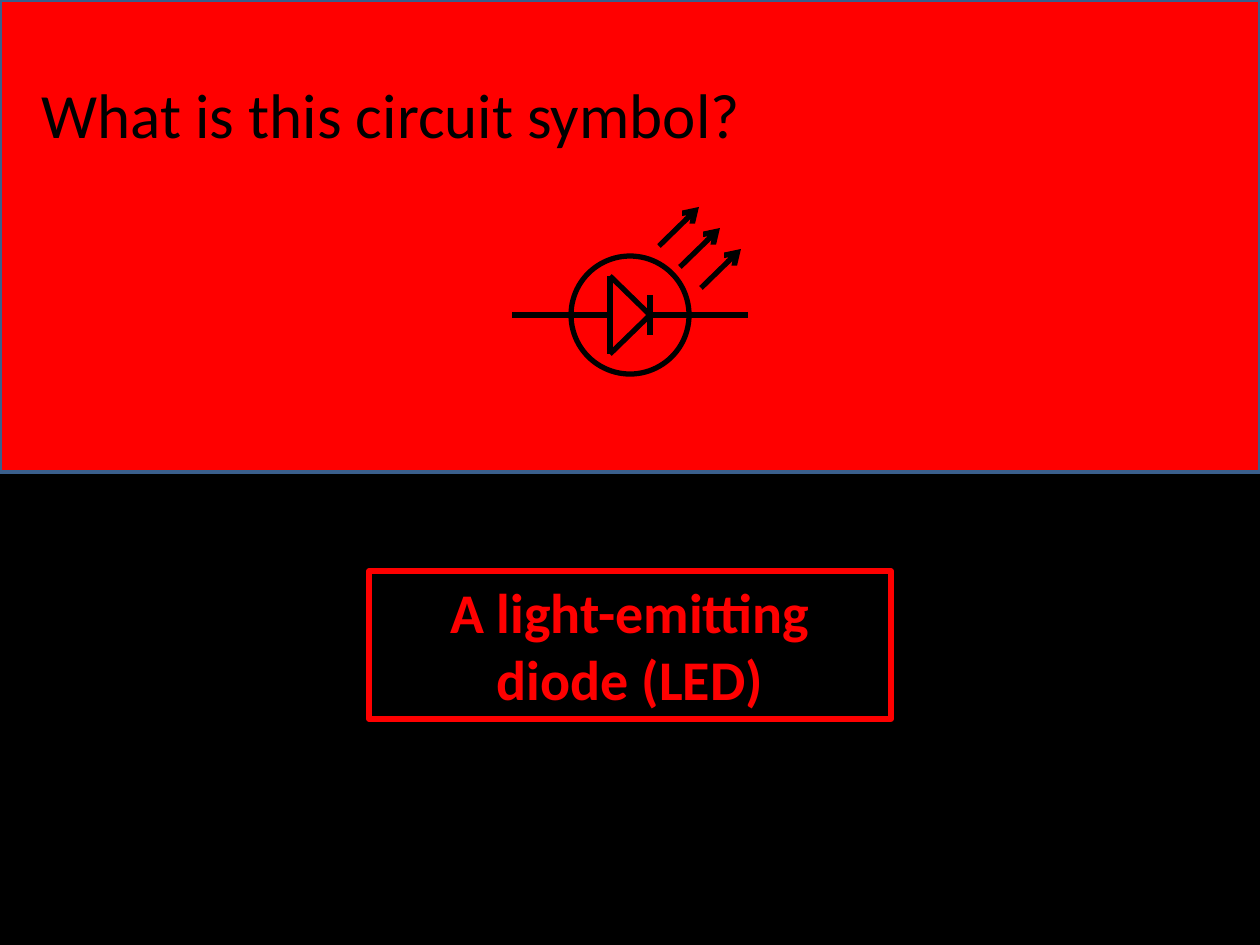
from typing import NamedTuple

from lxml.etree import SubElement
from pptx import Presentation
from pptx.dml.color import RGBColor
from pptx.enum.shapes import MSO_CONNECTOR, MSO_SHAPE
from pptx.enum.text import MSO_ANCHOR, MSO_AUTO_SIZE, PP_ALIGN
from pptx.oxml.ns import qn
from pptx.util import Emu, Pt

EMU_PER_PX = 914400 / 126
COLOURS = {"red": "FF0000", "black": "000000", "edge": "3A5F8C"}


class Box(NamedTuple):
    left: int
    top: int
    width: int
    height: int


class Stroke(NamedTuple):
    x1: int
    y1: int
    x2: int
    y2: int
    arrow: bool = False


# Diode symbol: leads, triangle and bar inside a circle
CIRCLE = Box(571, 256, 118, 118)
DIODE = [
    Stroke(650, 315, 748, 315),
    Stroke(610, 315, 512, 315),
    Stroke(610, 276, 610, 354),
    Stroke(610, 276, 650, 315),
    Stroke(610, 354, 650, 315),
    Stroke(650, 295, 650, 335),
]
# Light rays: three parallel arrows, each one step down and right
RAY_STEP = 21
RAYS = [
    Stroke(659 + shift, 246 + shift, 699 + shift, 207 + shift, True)
    for shift in range(0, 3 * RAY_STEP, RAY_STEP)
]


def px(length: int) -> Emu:
    return Emu(round(length * EMU_PER_PX))


def colour(name: str) -> RGBColor:
    return RGBColor.from_string(COLOURS[name])


def set_line(item, name: str, points: float) -> None:
    item.line.color.rgb = colour(name)
    item.line.width = Pt(points)


def add_shape(shapes, kind: MSO_SHAPE, box: Box, fill: str | None,
              line: str, points: float):
    shape = shapes.add_shape(kind, *map(px, box))
    shape.shadow.inherit = False
    if fill:
        shape.fill.solid()
        shape.fill.fore_color.rgb = colour(fill)
    else:
        shape.fill.background()
    set_line(shape, line, points)
    return shape


def add_stroke(shapes, stroke: Stroke) -> None:
    line = shapes.add_connector(MSO_CONNECTOR.STRAIGHT, *map(px, stroke[:4]))
    set_line(line, "black", 3)
    if stroke.arrow:
        SubElement(line.line._get_or_add_ln(), qn("a:tailEnd"), type="arrow")
    SubElement(line._element.spPr, qn("a:effectLst"))


def write(shape, text: str, name: str, align: PP_ALIGN, **font_format) -> None:
    frame = shape.text_frame
    frame.word_wrap = True
    frame.auto_size = MSO_AUTO_SIZE.SHAPE_TO_FIT_TEXT
    frame.vertical_anchor = MSO_ANCHOR.TOP
    para = frame.paragraphs[0]
    para.alignment = align
    span = para.add_run()
    span.text = text
    span.font.color.rgb = colour(name)
    for key, value in {"name": "Calibri", **font_format}.items():
        setattr(span.font, key, value)


def main() -> None:
    deck = Presentation()
    deck.slide_width, deck.slide_height = px(1260), px(945)
    page = deck.slides.add_slide(deck.slide_layouts[6])
    page.background.fill.solid()
    page.background.fill.fore_color.rgb = colour("black")

    # Question panel
    add_shape(page.shapes, MSO_SHAPE.RECTANGLE, Box(0, 0, 1260, 472), "red", "edge", 2)
    question = page.shapes.add_textbox(*map(px, Box(29, 69, 867, 89)))
    write(question, "What is this circuit symbol?", "black", PP_ALIGN.LEFT, size=Pt(36))

    # Answer box
    answer = add_shape(page.shapes, MSO_SHAPE.RECTANGLE, Box(369, 571, 522, 148),
                       "black", "red", 3)
    write(answer, "A light-emitting diode (LED)", "red", PP_ALIGN.CENTER,
          size=Pt(32), bold=True)

    # Circuit symbol
    diode = page.shapes.add_group_shape()
    add_shape(diode.shapes, MSO_SHAPE.OVAL, CIRCLE, None, "black", 3)
    rays = page.shapes.add_group_shape()
    for group, strokes in ((diode, DIODE), (rays, RAYS)):
        for stroke in strokes:
            add_stroke(group.shapes, stroke)

    deck.save("out.pptx")


if __name__ == "__main__":
    main()
